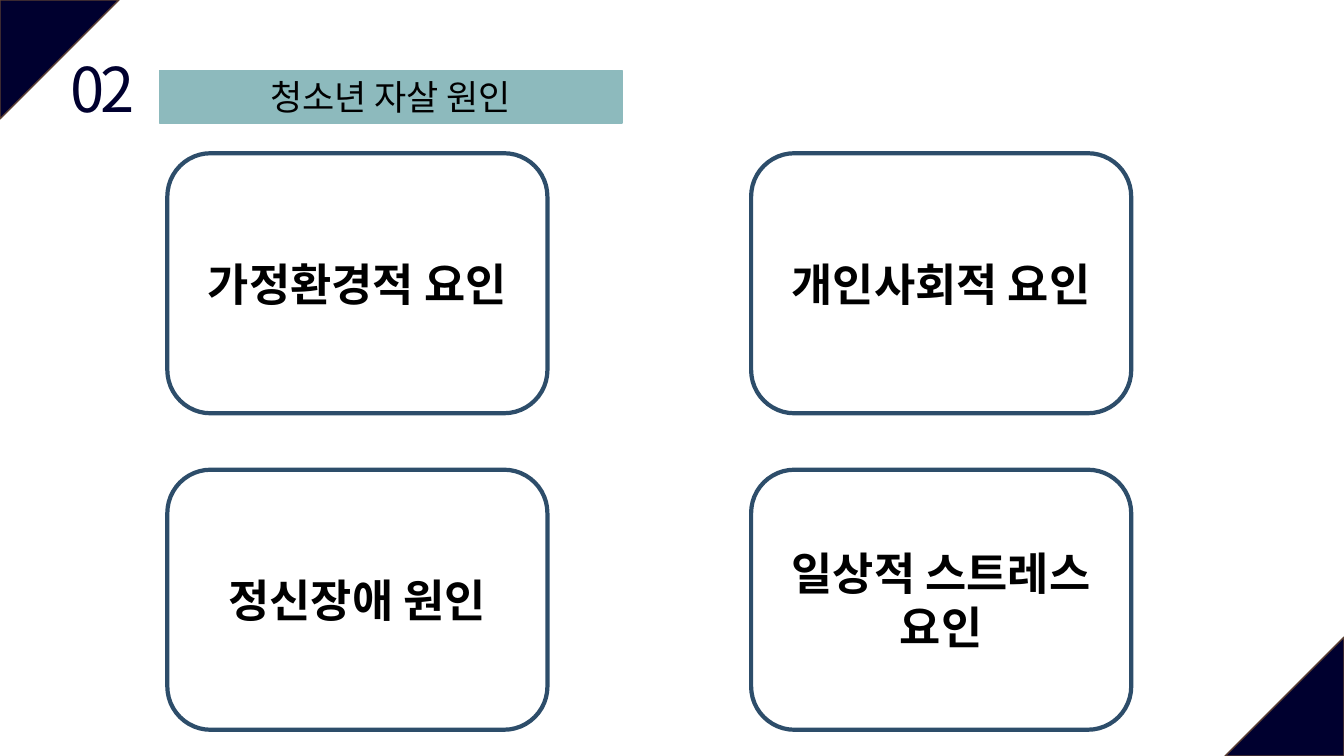
from pptx import Presentation
from pptx.dml.color import RGBColor
from pptx.enum.shapes import MSO_SHAPE
from pptx.enum.text import MSO_ANCHOR, MSO_AUTO_SIZE, PP_ALIGN
from pptx.util import Inches, Pt
from lxml import etree

NAVY = RGBColor(0x00, 0x00, 0x2F)
BROWN = RGBColor(0x5B, 0x3F, 0x33)
TEAL = RGBColor(0x8D, 0xBA, 0xBD)
BLUE = RGBColor(0x2D, 0x4D, 0x6A)
WHITE = RGBColor(0xFF, 0xFF, 0xFF)
BLACK = RGBColor(0x00, 0x00, 0x00)
FONT = "Noto Sans CJK KR"
TRIANGLE = MSO_SHAPE.ISOSCELES_TRIANGLE
CARD = MSO_SHAPE.FLOWCHART_ALTERNATE_PROCESS
MIDDLE = MSO_ANCHOR.MIDDLE
CENTER = PP_ALIGN.CENTER
NO_FIT = MSO_AUTO_SIZE.NONE
GROW = MSO_AUTO_SIZE.SHAPE_TO_FIT_TEXT
A = "{http://schemas.openxmlformats.org/drawingml/2006/main}"


def paint(shape, fill, line, width):
    shape.fill.solid()
    shape.fill.fore_color.rgb = fill
    shape.line.color.rgb = line
    shape.line.width = Pt(width)


def write(shape, text, size, color, bold=False):
    """Fill the shape with one styled run, Korean font included, and return it."""
    frame = shape.text_frame
    frame.text = text
    run = frame.paragraphs[0].runs[0]
    run.font.size = Pt(size)
    run.font.bold = bold
    run.font.color.rgb = color
    run.font.name = FONT
    etree.SubElement(run.font._element, A + "ea", typeface=FONT)
    return run


deck = Presentation()
deck.slide_width = Inches(13.33)
deck.slide_height = Inches(7.5)
slide = deck.slides.add_slide(deck.slide_layouts[5])
shapes = slide.shapes

# Corner triangles
SIDE = 1.18
for left, top, turn in [(0, 0, 90), (13.33 - SIDE, 7.5 - SIDE, 270)]:
    corner = shapes.add_shape(TRIANGLE, Inches(left), Inches(top), Inches(SIDE), Inches(SIDE))
    corner.adjustments[0] = 0
    corner.rotation = turn
    corner.shadow.inherit = False
    paint(corner, NAVY, BROWN, 1)

# Section number and title
number = shapes.add_textbox(Inches(0.6), Inches(0.46), Inches(1.07), Inches(0.83))
number.text_frame.word_wrap = False
number.text_frame.auto_size = GROW
digits = write(number, "02", 44, NAVY)
digits.font._element.set("spc", "-300")

title = shapes.title
title.left, title.top = Inches(1.58), Inches(0.7)
title.width, title.height = Inches(4.59), Inches(0.52)
paint(title, TEAL, TEAL, 1)
write(title, "청소년 자살 원인", 25, BLACK)
title.text_frame.auto_size = NO_FIT
title.text_frame.vertical_anchor = MIDDLE
title.text_frame.paragraphs[0].alignment = CENTER

# Grid of causes
CAUSES = [
    ["가정환경적 요인", "개인사회적 요인"],
    ["정신장애 원인", "일상적 스트레스 요인"],
]
for row, names in enumerate(CAUSES):
    for col, name in enumerate(names):
        card = shapes.add_shape(CARD, Inches(1.66 + 5.79 * col), Inches(1.52 + 3.14 * row),
                                Inches(3.77), Inches(2.58))
        card.shadow.inherit = False
        paint(card, WHITE, BLUE, 3)
        write(card, name, 32, BLACK, bold=True)
        card.text_frame.word_wrap = True
        card.text_frame.vertical_anchor = MIDDLE
        card.text_frame.paragraphs[0].alignment = CENTER

deck.save("out.pptx")
